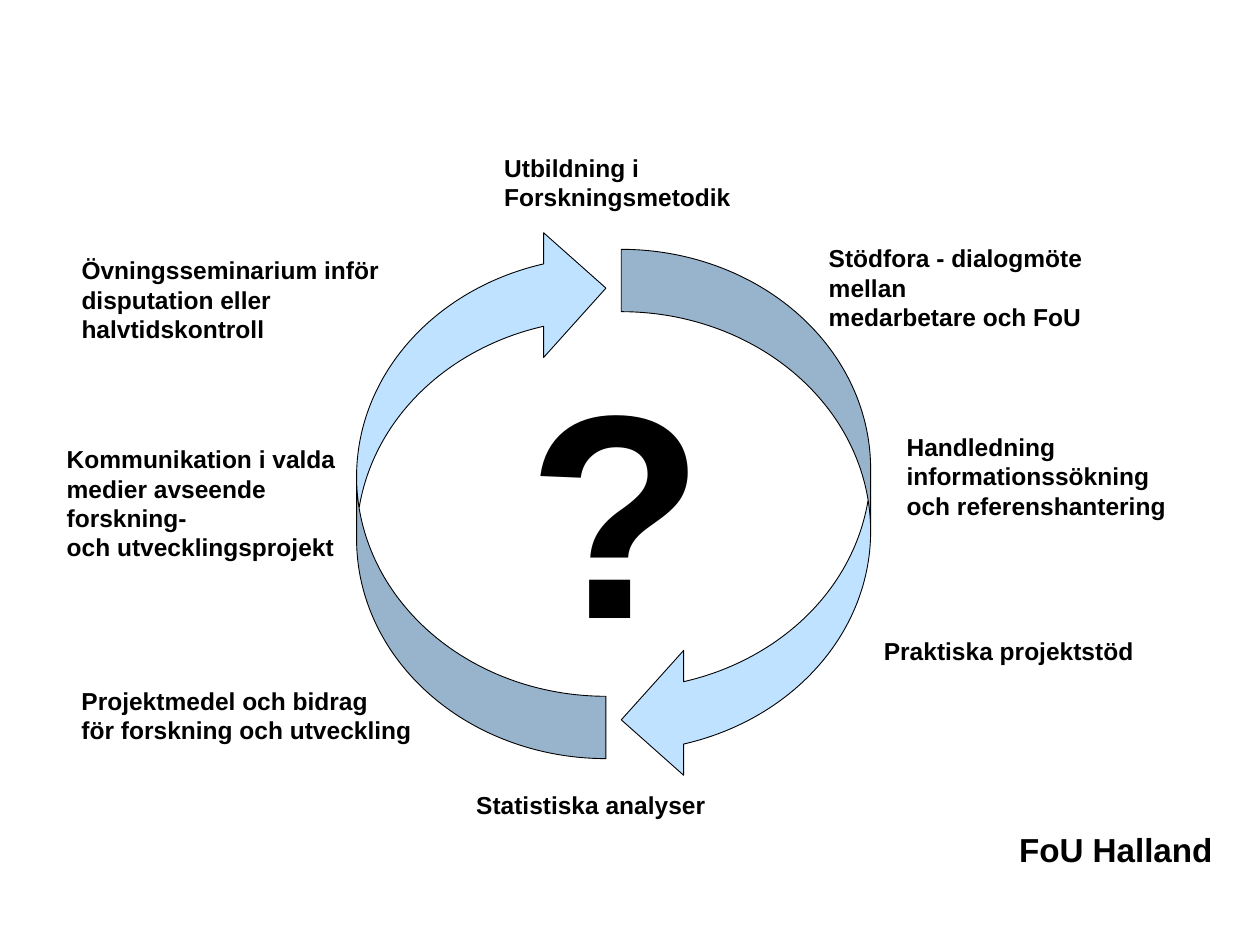
from dataclasses import dataclass

from pptx import Presentation
from pptx.dml.color import RGBColor
from pptx.enum.shapes import MSO_SHAPE
from pptx.enum.text import PP_ALIGN
from pptx.util import Pt

ARROW = MSO_SHAPE.CURVED_LEFT_ARROW
LEFT, RIGHT = PP_ALIGN.LEFT, PP_ALIGN.RIGHT


@dataclass(frozen=True)
class Theme:
    font: str = "Arial"
    ink: RGBColor = RGBColor(0, 0, 0)
    fill: RGBColor = RGBColor(0xBE, 0xE2, 0xFF)
    label: float = 14
    label_line: float = 16.75
    mark: float = 166
    mark_line: float = 206
    foot: float = 19
    foot_line: float = 22
    edge: float = 0.5


THEME = Theme()

# Text, then left, top, width and height
LABELS = [
    ("Utbildning i\nForskningsmetodik", (281, 84, 148, 58)),
    ("Stödfora - dialogmöte\nmellan\nmedarbetare och FoU", (466.5, 135.5, 164, 73)),
    ("Handledning\ninformationssökning\noch referenshantering", (511, 243.5, 163.5, 75)),
    ("Praktiska projektstöd", (498, 360, 158, 58)),
    ("Statistiska analyser", (265, 448, 146, 39)),
    ("Projektmedel och bidrag\nför forskning och utveckling", (39.5, 388.5, 207.5, 41)),
    ("Kommunikation i valda\nmedier avseende\nforskning-\noch utvecklingsprojekt",
     (31, 250.5, 173, 90)),
    ("Övningsseminarium inför\ndisputation eller\nhalvtidskontroll", (39.5, 142.5, 189.5, 58)),
]
MARK = ("?", (294.5, 177, 48, 208))
FOOT = ("FoU Halland", (274, 471, 426, 40))

# Left, top and turn of each half of the cycle
ARROWS = [(355, 142.5, 0), (203.75, 129, 180)]
ARROW_SIZE = (142.5, 304.5)


def add_text(slide, text, box, size, line, align=LEFT):
    frame = slide.shapes.add_textbox(*map(Pt, box)).text_frame
    frame.word_wrap = True
    if align == LEFT:
        frame.margin_right = 0
    frame.text = text
    for para in frame.paragraphs:
        para.alignment = align
        para.line_spacing = Pt(line)
        for run in para.runs:
            run.font.name = THEME.font
            run.font.size = Pt(size)
            run.font.bold = True
            run.font.color.rgb = THEME.ink


def add_arrow(slide, left, top, turn):
    arrow = slide.shapes.add_shape(ARROW, Pt(left), Pt(top), *map(Pt, ARROW_SIZE))
    arrow.rotation = turn
    arrow.shadow.inherit = False
    arrow.fill.solid()
    arrow.fill.fore_color.rgb = THEME.fill
    arrow.line.color.rgb = THEME.ink
    arrow.line.width = Pt(THEME.edge)


def main():
    deck = Presentation()
    deck.slide_width, deck.slide_height = Pt(720), Pt(540)
    slide = deck.slides.add_slide(deck.slide_layouts[6])
    add_text(slide, *FOOT, THEME.foot, THEME.foot_line, RIGHT)
    for text, box in LABELS:
        add_text(slide, text, box, THEME.label, THEME.label_line)
    for place in ARROWS:
        add_arrow(slide, *place)
    add_text(slide, *MARK, THEME.mark, THEME.mark_line)
    deck.save("out.pptx")


if __name__ == "__main__":
    main()
